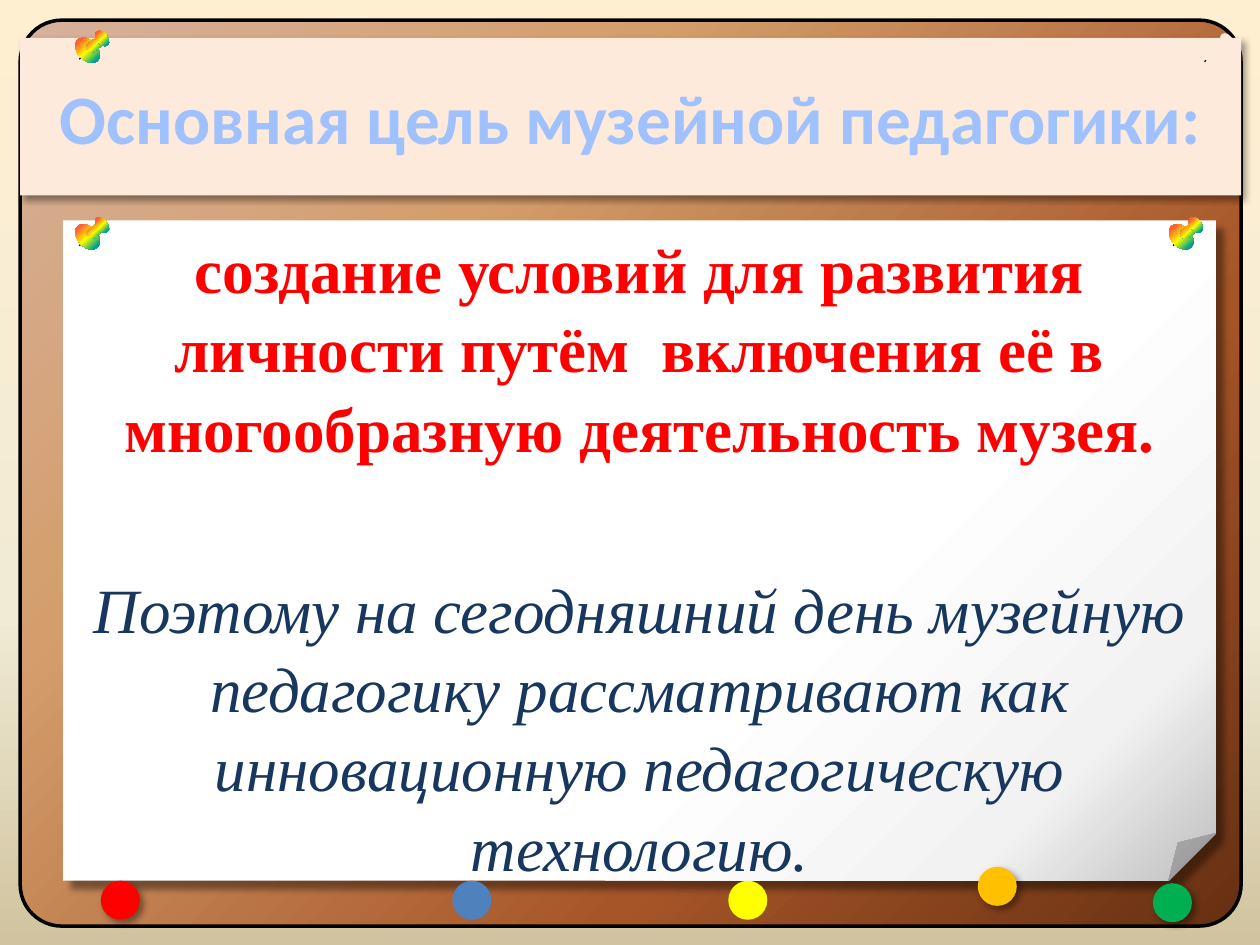
import pptx
import pptx.dml.color
import pptx.enum.shapes
import pptx.enum.text
import pptx.oxml
import pptx.oxml.ns
import pptx.util

Inches = pptx.util.Inches
Pt = pptx.util.Pt
qn = pptx.oxml.ns.qn
SHAPES = pptx.enum.shapes.MSO_SHAPE
ANCHOR = pptx.enum.text.MSO_ANCHOR
CENTER = pptx.enum.text.PP_ALIGN.CENTER
NAMESPACE = pptx.oxml.ns.nsdecls("a")

LINEAR = '<a:lin ang="{}" scaled="0"/>'
FROM_CORNER = '<a:path path="circle"><a:fillToRect l="0" t="0" r="100000" b="100000"/></a:path>'

PAPER = ([(0, "FFEFD1"), (65, "F0EBD5"), (100, "D1C39F")], LINEAR.format(5400000))
WOOD = ([(0, "D6B19C"), (30, "D49E6C"), (70, "A65528"), (100, "663012")], FROM_CORNER)
SHEET = ([(63, "FFFFFF"), (86, "F2F2F2"), (100, "BFBFBF")], LINEAR.format(2700000))
SKY = ([(0, "BFD3F9"), (9, "A0C1FF"), (50, "003D85"), (79, "A0C1FF"), (100, "BFD3F9")],
       LINEAR.format(5400000))
RAINBOW = ([(0, "FF3399"), (25, "FF6633"), (50, "FFFF00"), (75, "01A78F"), (100, "3366FF")],
           FROM_CORNER)
PEACH = "FDEADA"


def rgb(value):
    """Turn a hex string into a colour."""
    return pptx.dml.color.RGBColor.from_string(value)


def paint(fill, owner, colour):
    """Fill with a hex colour or a (stops, direction) gradient."""
    fill.solid()
    if isinstance(colour, str):
        fill.fore_color.rgb = rgb(colour)
        return
    stops, direction = colour
    stop_list = "".join(
        f'<a:gs pos="{position * 1000}"><a:srgbClr val="{value}"/></a:gs>'
        for position, value in stops)
    gradient = pptx.oxml.parse_xml(
        f'<a:gradFill {NAMESPACE} rotWithShape="1"><a:gsLst>{stop_list}</a:gsLst>'
        f'{direction}</a:gradFill>')
    owner.replace(owner.find(qn("a:solidFill")), gradient)


def style(shape, colour, shadow_distance=0):
    """Give a shape its fill, no outline and an optional drop shadow."""
    properties = shape._element.spPr
    paint(shape.fill, properties, colour)
    shape.line.fill.background()
    shape.shadow.inherit = False
    if shadow_distance:
        properties.find(qn("a:effectLst")).append(pptx.oxml.parse_xml(
            f'<a:outerShdw {NAMESPACE} blurRad="{Pt(4)}" dist="{Pt(shadow_distance)}" '
            'dir="2700000" algn="tl" rotWithShape="0"><a:srgbClr val="000000">'
            '<a:alpha val="40000"/></a:srgbClr></a:outerShdw>'))


def set_corner(figure, corner):
    """Set the corner size of a preset shape as a share of its short side."""
    adjustments = figure._element.spPr.find(f".//{qn('a:avLst')}")
    for guide in list(adjustments):
        adjustments.remove(guide)
    adjustments.append(pptx.oxml.parse_xml(
        f'<a:gd {NAMESPACE} name="adj" fmla="val {round(corner * 100000)}"/>'))


def add_figure(shapes, preset, box, colour, shadow_distance=0, corner=None, rotation=0):
    """Add a styled preset shape."""
    figure = shapes.add_shape(preset, *map(Inches, box))
    figure.rotation = rotation
    if corner is not None:
        set_corner(figure, corner)
    style(figure, colour, shadow_distance)
    return figure


def add_text(paragraph, text, font_name, size, colour, bold=False, italic=False):
    """Add one centred run to a paragraph."""
    paragraph.alignment = CENTER
    run = paragraph.add_run()
    run.text = text
    font = run.font
    font.size, font.bold, font.italic = Pt(size), bold, italic
    paint(font.fill, run._r.get_or_add_rPr(), colour)
    font.name = font_name


def add_heading(slide):
    """Format the title as a peach paper strip."""
    heading = slide.shapes.title
    heading.left, heading.top = Inches(0.16), Inches(0.3)
    heading.width, heading.height = Inches(9.69), Inches(1.25)
    heading._element.spPr.append(pptx.oxml.parse_xml(
        f'<a:prstGeom {NAMESPACE} prst="foldedCorner"><a:avLst/></a:prstGeom>'))
    style(heading, PEACH, 3)
    frame = heading.text_frame
    frame.auto_size = pptx.enum.text.MSO_AUTO_SIZE.NONE
    frame.vertical_anchor = ANCHOR.MIDDLE
    add_text(frame.paragraphs[0], "Основная цель музейной педагогики:",
             "Calibri", 39.6, SKY, bold=True)


def add_sheet(slide):
    """Add the folded sheet with the goal and its conclusion."""
    sheet = add_figure(slide.shapes, SHAPES.FOLDED_CORNER, (0.5, 1.75, 9.15, 5.24),
                       SHEET, 7, corner=0.072)
    frame = sheet.text_frame
    frame.word_wrap = True
    frame.vertical_anchor = ANCHOR.TOP
    goal, conclusion = frame.paragraphs[0], frame.add_paragraph()
    goal.space_before, conclusion.space_before = Pt(7.2), Pt(58)
    goal.line_spacing = conclusion.line_spacing = 1.05
    add_text(goal, "создание условий для развития личности путём  включения её в "
             "многообразную деятельность музея.", "Times New Roman", 36, "FF0000", bold=True)
    add_text(conclusion, "Поэтому на сегодняшний день музейную педагогику рассматривают "
             "как инновационную педагогическую технологию.",
             "Times New Roman", 36, "17375E", italic=True)


def add_pin(slide, left, top, colour):
    """Add a push pin made of a needle, a base, a neck and a cap."""
    pin = slide.shapes.add_group_shape().shapes
    needle = pin.add_connector(
        pptx.enum.shapes.MSO_CONNECTOR.STRAIGHT,
        Inches(left + 0.09), Inches(top + 0.17), Inches(left + 0.05), Inches(top + 0.21))
    needle.line.color.rgb = rgb("000000")
    needle.line.width = Pt(0.75)
    needle._element.spPr.append(pptx.oxml.parse_xml(f"<a:effectLst {NAMESPACE}/>"))
    add_figure(pin, SHAPES.OVAL, (left, top + 0.06, 0.23, 0.16), colour, rotation=47.4)
    add_figure(pin, SHAPES.ROUNDED_RECTANGLE, (left + 0.14, top + 0.01, 0.08, 0.16),
               colour, corner=0.4, rotation=53.2)
    add_figure(pin, SHAPES.OVAL, (left + 0.16, top, 0.14, 0.09), colour, rotation=51.5)


def main():
    """Build the slide and save it."""
    deck = pptx.Presentation()
    deck.slide_width, deck.slide_height = Inches(10), Inches(7.5)
    slide = deck.slides.add_slide(deck.slide_layouts[5])
    backdrop = slide.background.fill
    backdrop.solid()
    paint(backdrop, slide._element.find(f".//{qn('p:bgPr')}"), PAPER)

    board = add_figure(slide.shapes, SHAPES.ROUNDED_RECTANGLE, (0.16, 0.16, 9.69, 7.19),
                       WOOD, corner=0.046)
    board.line.color.rgb = rgb("000000")
    board.line.width = Pt(2)
    slide.shapes.title._element.addprevious(board._element)

    add_heading(slide)
    add_sheet(slide)
    for left, top, colour in [(0.58, 0.26, RAINBOW), (9.51, 0.28, PEACH),
                              (0.58, 1.74, RAINBOW), (9.26, 1.74, RAINBOW)]:
        add_pin(slide, left, top, colour)
    for left, top, colour, shadow_distance in [
            (0.8, 6.99, "FF0000", 3), (7.76, 6.88, "FFC000", 3), (9.15, 7.01, "00B050", 3),
            (5.78, 6.99, "FFFF00", 0), (3.59, 6.99, "4F81BD", 0)]:
        add_figure(slide.shapes, SHAPES.OVAL, (left, top, 0.31, 0.31), colour, shadow_distance)
    deck.save("out.pptx")


if __name__ == "__main__":
    main()
